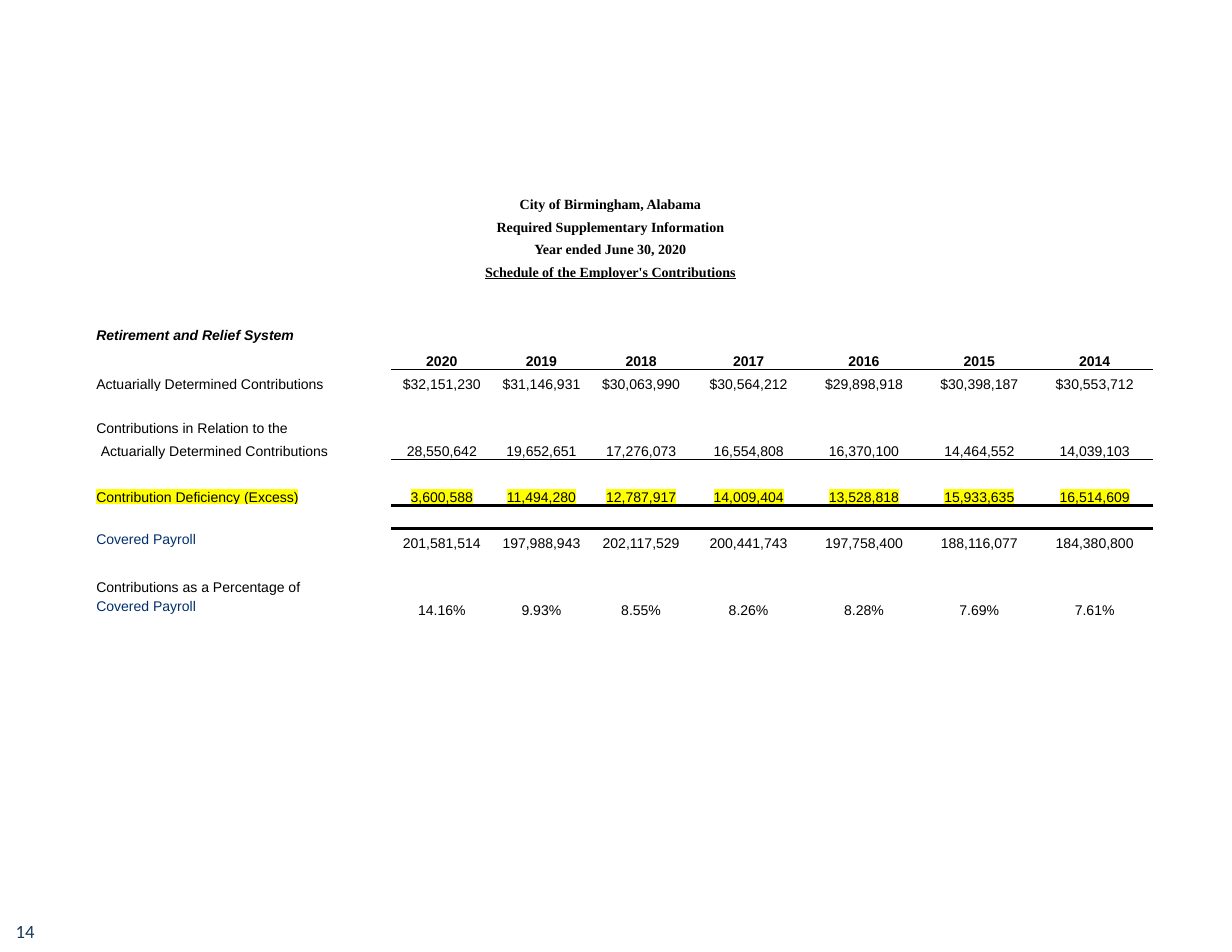
"""Build the schedule of the employer's contributions as one table slide."""
from dataclasses import dataclass

from lxml import etree
from pptx import Presentation
from pptx.dml.color import RGBColor
from pptx.enum.text import MSO_ANCHOR, PP_ALIGN
from pptx.oxml.ns import qn
from pptx.util import Inches, Pt

BOTTOM, MIDDLE = MSO_ANCHOR.BOTTOM, MSO_ANCHOR.MIDDLE
LEFT, CENTER, JUSTIFY = PP_ALIGN.LEFT, PP_ALIGN.CENTER, PP_ALIGN.JUSTIFY


@dataclass(frozen=True)
class Theme:
    """Keep the colours, fonts, type sizes and line widths."""

    black: str = "000000"
    navy: str = "002E6D"
    slate: str = "17375E"
    yellow: str = "FFFF00"
    serif: str = "Times New Roman"
    sans: str = "Arial"
    footer: str = "Calibri"
    body: int = 9
    page: int = 12
    thin: float = 1
    thick: float = 2.25


THEME = Theme()
WIDTHS = [0.18, 2.25, 0.46] + [0.89] * 3 + [1.03] * 4
HEIGHTS = [0.2] * 13 + [0.21] * 2 + [0.2] * 4
FIRST = 3
HEADS = [
    ("City of Birmingham, Alabama", {}),
    ("Required Supplementary Information", {}),
    ("Year ended June 30, 2020", {}),
    ("Schedule of the Employer's Contributions", {"underline": True}),
]
PAYROLL = ("Covered Payroll",
           {"align": JUSTIFY, "anchor": MIDDLE, "color": THEME.navy})
LABELS = {
    6: ("Retirement and Relief System",
        {"align": JUSTIFY, "anchor": MIDDLE, "bold": True, "italic": True}),
    8: ("Actuarially Determined Contributions", {}),
    10: ("Contributions in Relation to the", {}),
    11: ("Actuarially Determined Contributions", {"inset": 0.11}),
    13: ("Contribution Deficiency (Excess)", {"mark": THEME.yellow}),
    15: PAYROLL,
    17: ("Contributions as a Percentage of", {}),
    18: PAYROLL,
}
VALUES = {
    7: ("2020 2019 2018 2017 2016 2015 2014", {"bold": True}),
    8: ("$32,151,230 $31,146,931 $30,063,990 $30,564,212 "
        "$29,898,918 $30,398,187 $30,553,712", {}),
    11: ("28,550,642 19,652,651 17,276,073 16,554,808 "
         "16,370,100 14,464,552 14,039,103", {}),
    13: ("3,600,588 11,494,280 12,787,917 14,009,404 "
         "13,528,818 15,933,635 16,514,609", {"mark": THEME.yellow}),
    15: ("201,581,514 197,988,943 202,117,529 200,441,743 "
         "197,758,400 188,116,077 184,380,800", {}),
    18: ("14.16% 9.93% 8.55% 8.26% 8.28% 7.69% 7.61%", {}),
}
RULES = {7: THEME.thin, 11: THEME.thin, 13: THEME.thick}


class Deck:
    """Hold the theme and the current slide, and add elements to it."""

    def __init__(self, theme, slide):
        """Keep the theme and the slide."""
        self.theme = theme
        self.slide = slide

    def put(self, para, text, align=LEFT, color=None, mark=None, **font):
        """Put one styled run into a paragraph."""
        para.alignment = align
        run = para.add_run()
        run.text = text
        style = {"name": self.theme.sans, "size": Pt(self.theme.body), "bold": False}
        for key, value in {**style, **font}.items():
            setattr(run.font, key, value)
        run.font.color.rgb = RGBColor.from_string(color or self.theme.black)
        if mark:
            light = etree.Element(qn("a:highlight"))
            etree.SubElement(light, qn("a:srgbClr"), val=mark)
            run._r.find(qn("a:rPr")).find(qn("a:solidFill")).addnext(light)

    def label(self, text, left, top, width, height, **style):
        """Add a text box with one line of text."""
        box = self.slide.shapes.add_textbox(*map(Inches, (left, top, width, height)))
        frame = box.text_frame
        form = {"word_wrap": True, "vertical_anchor": MIDDLE,
                "margin_left": Inches(0.14), "margin_right": 0}
        for key, value in form.items():
            setattr(frame, key, value)
        self.put(frame.paragraphs[0], text, **style)

    def grid(self, left, top, widths, heights):
        """Add a plain table with small, unfilled cells."""
        sizes = (left, top, sum(widths), sum(heights))
        frame = self.slide.shapes.add_table(
            len(heights), len(widths), *map(Inches, sizes))
        table = frame.table
        table.first_row = table.horz_banding = False
        for col, width in zip(table.columns, widths):
            col.width = Inches(width)
        for row, height in zip(table.rows, heights):
            row.height = Inches(height)
        form = {"margin_left": Inches(0.07), "margin_right": Inches(0.07),
                "margin_top": 0, "margin_bottom": 0}
        for cell in table.iter_cells():
            for key, value in form.items():
                setattr(cell, key, value)
            cell.fill.background()
            para = cell.text_frame.paragraphs[0]
            etree.SubElement(para._p, qn("a:endParaRPr"), sz=str(self.theme.body * 100))
        return table

    def fill(self, cell, text, anchor=BOTTOM, inset=0.07, **style):
        """Put styled text into a table cell."""
        cell.vertical_anchor = anchor
        cell.margin_left = Inches(inset)
        self.put(cell.text_frame.paragraphs[0], text, **style)

    def edge(self, cell, side, width):
        """Draw one border of a table cell."""
        line = etree.Element(qn(f"a:ln{side}"), w=str(Pt(width)))
        paint = etree.SubElement(line, qn("a:solidFill"))
        etree.SubElement(paint, qn("a:srgbClr"), val=self.theme.black)
        cell._tc.get_or_add_tcPr().insert(0, line)


def main():
    """Build and save the slide."""
    show = Presentation()
    show.slide_width, show.slide_height = Inches(11), Inches(8.5)
    deck = Deck(THEME, show.slides.add_slide(show.slide_layouts[6]))
    deck.label("14", 0, 8.16, 0.53, 0.3, name=THEME.footer,
               size=Pt(THEME.page), color=THEME.slate)

    table = deck.grid(0.61, 1.7, WIDTHS, HEIGHTS)
    for row, (text, style) in enumerate(HEADS):
        cell = table.cell(row, 0)
        cell.merge(table.cell(row, len(WIDTHS) - 1))
        deck.fill(cell, text, align=CENTER, name=THEME.serif, bold=True, **style)
    for row, (text, style) in LABELS.items():
        deck.fill(table.cell(row, 1), text, **style)
    for row, (line, style) in VALUES.items():
        for col, text in enumerate(line.split(), FIRST):
            deck.fill(table.cell(row, col), text, align=CENTER, **style)
    for row, width in RULES.items():
        for col in range(FIRST, len(WIDTHS)):
            deck.edge(table.cell(row, col), "B", width)
            deck.edge(table.cell(row + 1, col), "T", width)
    show.save("out.pptx")


if __name__ == "__main__":
    main()
